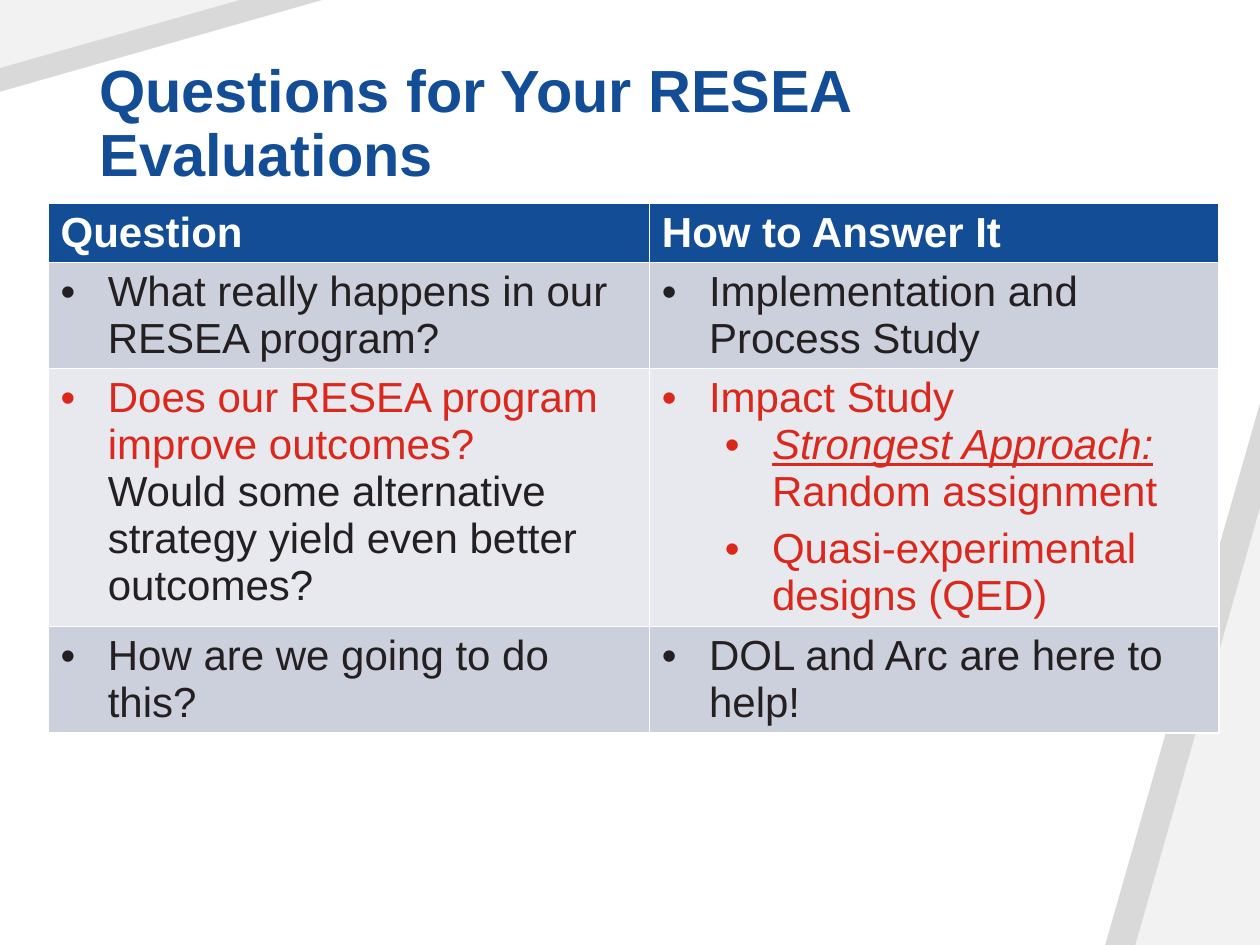
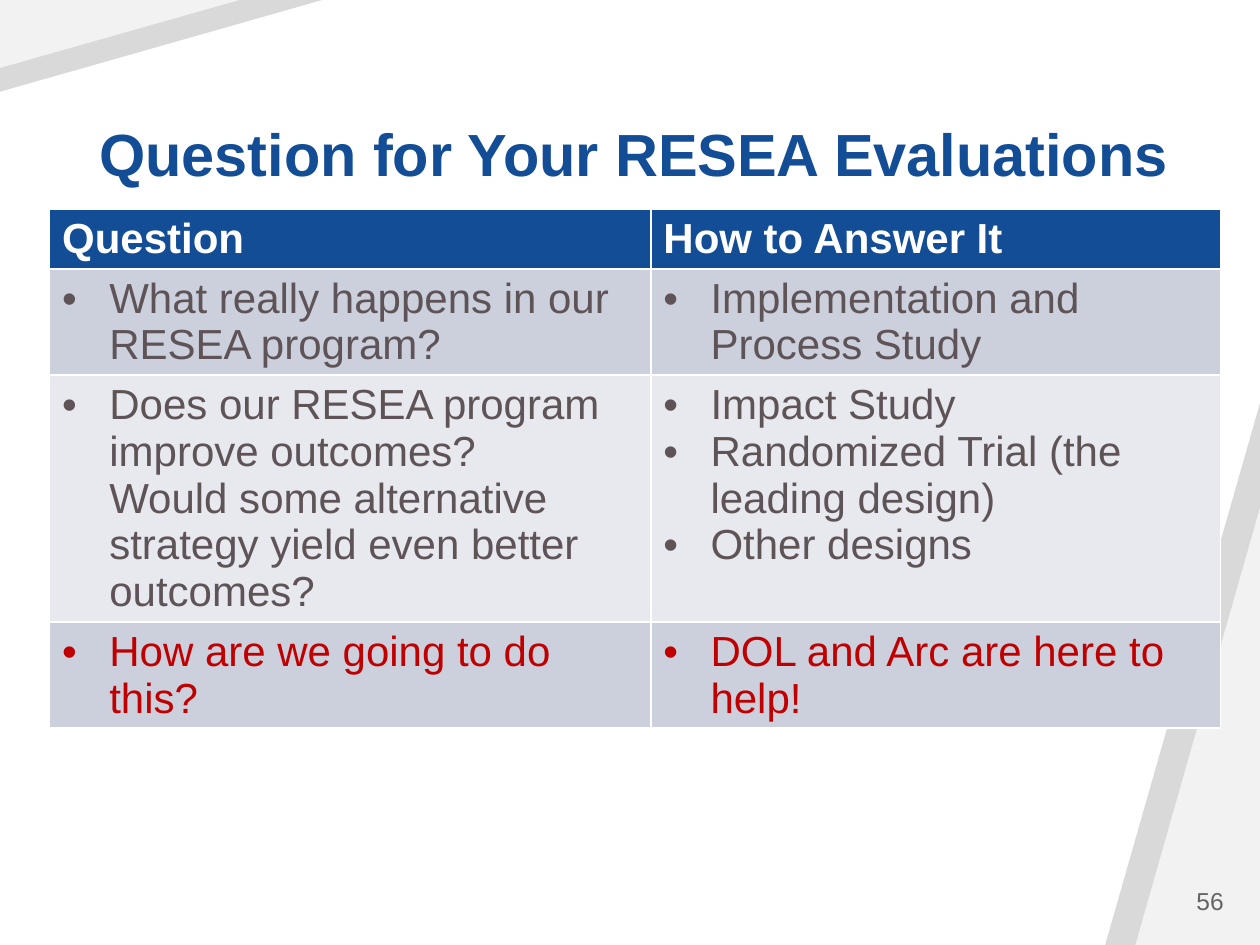
from lxml import etree
from pptx import Presentation
from pptx.dml.color import RGBColor
from pptx.enum.text import MSO_ANCHOR, MSO_AUTO_SIZE, PP_ALIGN
from pptx.oxml.ns import qn
from pptx.util import Cm, Pt

LEFT, RIGHT = PP_ALIGN.LEFT, PP_ALIGN.RIGHT
BOTTOM, MIDDLE = MSO_ANCHOR.BOTTOM, MSO_ANCHOR.MIDDLE
NO_AUTOFIT = MSO_AUTO_SIZE.NONE

FONT = "Arial"
BLUE = RGBColor(0x12, 0x4D, 0x95)
WHITE = RGBColor(0xFF, 0xFF, 0xFF)
BLACK = RGBColor(0x24, 0x20, 0x21)
GREY = RGBColor(0x5E, 0x54, 0x57)
NUMBER_GREY = RGBColor(0x64, 0x64, 0x64)
RED = RGBColor(0xDA, 0x29, 0x1C)
DARK_RED = RGBColor(0xC0, 0x00, 0x00)
BAND_DARK = RGBColor(0xCC, 0xD0, 0xDD)
BAND_LIGHT = RGBColor(0xE7, 0xE9, 0xEF)
CORNER_DARK = RGBColor(0xD9, 0xD9, 0xD9)
CORNER_LIGHT = RGBColor(0xF2, 0xF2, 0xF2)

SLIDE_WIDTH, SLIDE_HEIGHT = 25.4, 19.05
HANGING = 0.95
COLUMN_WIDTHS = (12.12, 11.48)
HEADINGS = ("Question", "How to Answer It")

# Corner triangles: corner x, corner y, horizontal leg, vertical leg, colour
CORNERS = (
    (SLIDE_WIDTH, SLIDE_HEIGHT, -3.12, -10.92, CORNER_DARK),
    (SLIDE_WIDTH, SLIDE_HEIGHT, -2.51, -8.81, CORNER_LIGHT),
    (0, 0, 6.5, 1.85, CORNER_DARK),
    (0, 0, 4.83, 1.37, CORNER_LIGHT),
)

HAPPENS = "What really happens in our RESEA program?"
PROCESS = "Implementation and Process Study"
IMPROVE = "Does our RESEA program improve outcomes?"
ALTERNATIVE = "Would some alternative strategy yield even better outcomes?"
HOW = "How are we going to do this?"
HELP = "DOL and Arc are here to help!"

# A cell is a list of bullets: (level, [(text, colour, emphasised), ...])
SLIDES = (
    {
        "title": "Questions for Your RESEA Evaluations",
        "table_at": (0.97, 4.09),
        "row_heights": (1.18, 2.1, 5.2, 2.1),
        "rows": (
            ([(0, [(HAPPENS, BLACK, False)])], [(0, [(PROCESS, BLACK, False)])]),
            (
                [(0, [(IMPROVE, RED, False), ("\n", RED, False), (ALTERNATIVE, BLACK, False)])],
                [
                    (0, [("Impact Study", RED, False)]),
                    (2, [("Strongest Approach: ", RED, True), ("Random assignment", RED, False)]),
                    (2, [("Quasi-experimental designs (QED)", RED, False)]),
                ],
            ),
            ([(0, [(HOW, BLACK, False)])], [(0, [(HELP, BLACK, False)])]),
        ),
        "number": None,
    },
    {
        "title": "Question for Your RESEA Evaluations",
        "table_at": (1, 4.22),
        "row_heights": (1.18, 2.1, 4.95, 2.1),
        "rows": (
            ([(0, [(HAPPENS, GREY, False)])], [(0, [(PROCESS, GREY, False)])]),
            (
                [(0, [(IMPROVE, GREY, False), ("\n", GREY, False), (ALTERNATIVE, GREY, False)])],
                [
                    (0, [("Impact Study", GREY, False)]),
                    (1, [("Randomized Trial (the leading design)", GREY, False)]),
                    (1, [("Other designs", GREY, False)]),
                ],
            ),
            ([(0, [(HOW, DARK_RED, False)])], [(0, [(HELP, DARK_RED, False)])]),
        ),
        "number": "56",
    },
)


def set_font(font, size, colour, bold=False):
    font.name, font.size, font.bold = FONT, Pt(size), bold
    font.color.rgb = colour


def add_bullet(paragraph, level, runs):
    """Write one hanging bullet; level 2 is indented further than the rest."""
    paragraph.level = level
    properties = paragraph._p.get_or_add_pPr()
    margin = HANGING + 1.27 if level == 2 else HANGING
    properties.set("marL", str(Cm(margin)))
    properties.set("indent", str(-Cm(HANGING)))
    etree.SubElement(properties, qn("a:buFont")).set("typeface", FONT)
    etree.SubElement(properties, qn("a:buChar")).set("char", "•")
    set_font(paragraph.font, 24, runs[0][1])
    for text, colour, emphasised in runs:
        if text == "\n":
            paragraph.add_line_break()
            continue
        run = paragraph.add_run()
        run.text = text
        if colour != runs[0][1]:
            run.font.color.rgb = colour
        if emphasised:
            run.font.italic = run.font.underline = True


presentation = Presentation()
presentation.slide_width, presentation.slide_height = Cm(SLIDE_WIDTH), Cm(SLIDE_HEIGHT)
layout = presentation.slide_layouts.get_by_name("Title Only")
slides = [presentation.slides.add_slide(layout) for _ in SLIDES]

# The corners are drawn once and moved to the shared layout, behind its placeholders
for position, (x, y, across, down, colour) in enumerate(CORNERS, start=2):
    builder = slides[0].shapes.build_freeform(Cm(x), Cm(y))
    builder.add_line_segments([(Cm(x + across), Cm(y)), (Cm(x), Cm(y + down))])
    corner = builder.convert_to_shape()
    corner.shadow.inherit = False
    corner.fill.solid()
    corner.fill.fore_color.rgb = colour
    corner.line.fill.background()
    layout.shapes._spTree.insert(position, corner._element)

for slide, content in zip(slides, SLIDES):
    title = slide.shapes.title
    title.left, title.top, title.width, title.height = Cm(1.75), Cm(1.02), Cm(22.1), Cm(2.92)
    frame = title.text_frame
    frame.text = content["title"]
    frame.auto_size, frame.vertical_anchor = NO_AUTOFIT, BOTTOM
    paragraph = frame.paragraphs[0]
    paragraph.alignment, paragraph.line_spacing = LEFT, 0.9
    set_font(paragraph.font, 34, BLUE, bold=True)

    left, top = content["table_at"]
    heights = content["row_heights"]
    table = slide.shapes.add_table(
        len(heights), len(COLUMN_WIDTHS), Cm(left), Cm(top),
        Cm(sum(COLUMN_WIDTHS)), Cm(sum(heights)),
    ).table
    for column, width in zip(table.columns, COLUMN_WIDTHS):
        column.width = Cm(width)
    for row, height in zip(table.rows, heights):
        row.height = Cm(height)

    for cell, heading in zip(table.rows[0].cells, HEADINGS):
        cell.fill.solid()
        cell.fill.fore_color.rgb = BLUE
        cell.text = heading
        set_font(cell.text_frame.paragraphs[0].font, 24, WHITE, bold=True)

    for row_index, row_content in enumerate(content["rows"], start=1):
        for cell, bullets in zip(table.rows[row_index].cells, row_content):
            cell.fill.solid()
            cell.fill.fore_color.rgb = BAND_DARK if row_index % 2 else BAND_LIGHT
            frame = cell.text_frame
            for index, (level, runs) in enumerate(bullets):
                paragraph = frame.paragraphs[0] if index == 0 else frame.add_paragraph()
                if level == 2 and bullets[index - 1][0] == 2:
                    paragraph.space_before = Pt(6)
                add_bullet(paragraph, level, runs)

    if content["number"]:
        number_box = slide.shapes.add_textbox(Cm(21.36), Cm(17.65), Cm(3.56), Cm(1.02))
        frame = number_box.text_frame
        frame.word_wrap, frame.vertical_anchor = True, MIDDLE
        frame.text = content["number"]
        frame.paragraphs[0].alignment = RIGHT
        set_font(frame.paragraphs[0].font, 14, NUMBER_GREY)

presentation.save("out.pptx")
